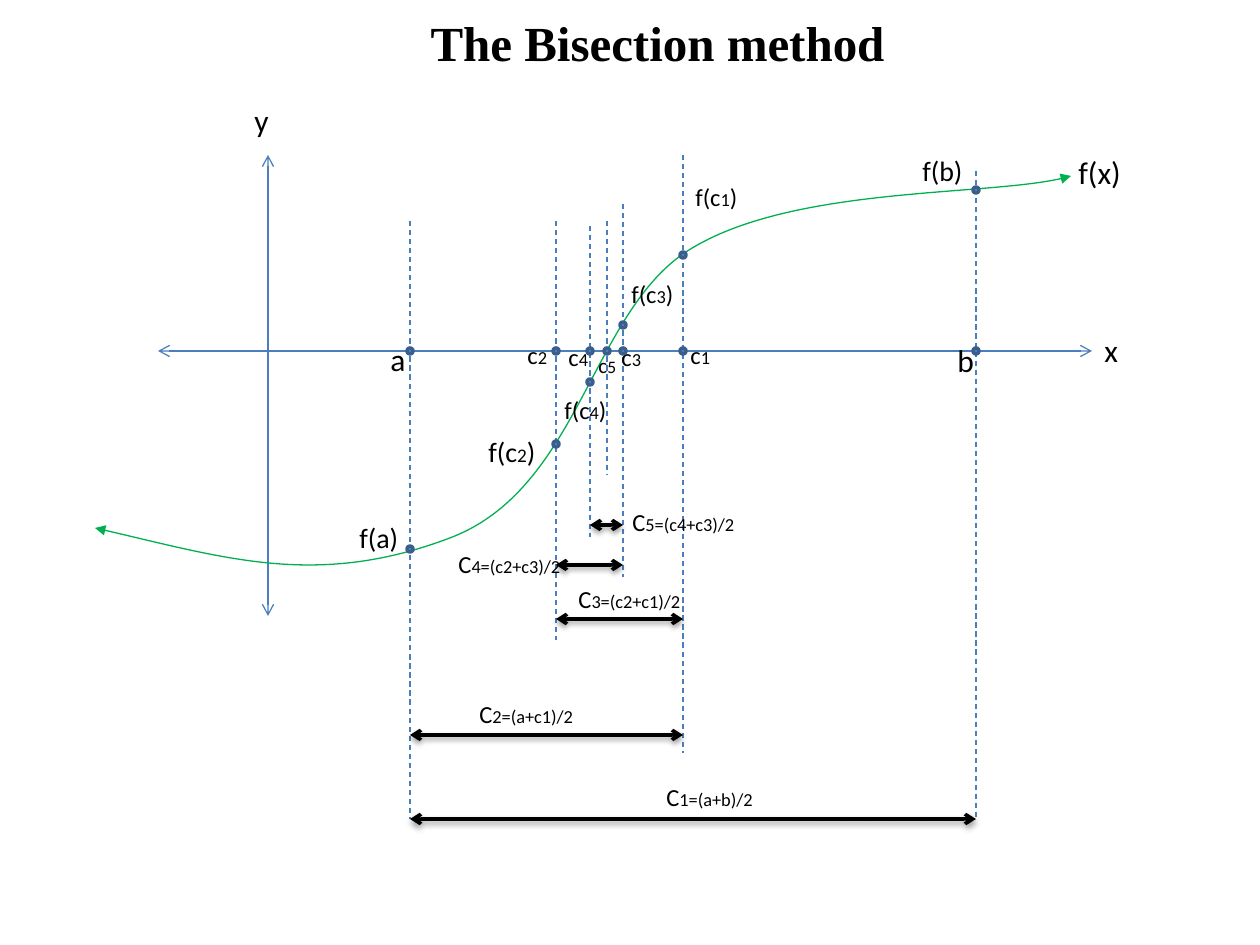
from lxml.etree import SubElement
from pptx import Presentation
from pptx.dml.color import RGBColor
from pptx.enum.dml import MSO_LINE
from pptx.enum.shapes import MSO_CONNECTOR, MSO_SHAPE
from pptx.enum.text import MSO_AUTO_SIZE, PP_ALIGN
from pptx.oxml.ns import qn
from pptx.util import Pt

PX = 914400 / 126
COLORS = {"ink": "000000", "axis": "4B7EBC", "curve": "00B050", "dot": "4F81BD", "rim": "3A5F8C"}
TEXT_HEIGHT = {18: 50, 16: 47, 14: 43, 12: 38}

AXIS_Y = 351
ABSCISSA = {"a": 410, "c2": 556, "c4": 590, "c5": 607, "c3": 623, "c1": 683, "b": 976}
GUIDES = {"a": (221, 819), "b": (171, 819), "c1": (155, 753), "c2": (221, 640),
          "c3": (204, 577), "c4": (226, 537), "c5": (221, 475)}
ORDINATE = {"a": 549, "c2": 444, "c4": 382, "c3": 325, "c1": 255, "b": 190}
INTERVALS = [("a", "b", 819), ("a", "c1", 735), ("c2", "c1", 619),
             ("c2", "c3", 565), ("c4", "c3", 525)]
CURVE_START = (95, 528)
CURVE_CONTROLS = [(222, 557), (318, 588), (450, 538),
                  (582, 488), (591, 306), (694, 247),
                  (798, 186), (1002, 197), (1071, 176)]
CURVE_HEIGHT = 388

PLAIN_LABELS = [
    ("y", 18, 242, 95, 40, False), ("f(x)", 18, 1066, 147, 68, False),
    ("x", 18, 1092, 325, 39, False), ("a", 18, 378, 334, 40, False),
    ("b", 18, 945, 335, 53, True), ("f(b)", 16, 910, 147, 66, False),
    ("f(a)", 16, 347, 514, 86, True),
]
POINT_LABELS = [
    ("1", 14, 10.5, 678, 334), ("2", 14, 10.5, 515, 334), ("3", 14, 10.5, 609, 336),
    ("4", 14, 10.5, 556, 336), ("5", 12, 10, 586, 346),
]
VALUE_LABELS = [
    ("1", 14, 10.5, 683, 176), ("2", 16, 11, 476, 428),
    ("3", 14, 10.5, 619, 273), ("4", 14, 10.5, 552, 389),
]
FORMULAS = [
    ("1=(a+b)/2", 654, 776, 113), ("2=(a+c1)/2", 467, 693, 121),
    ("3=(c2+c1)/2", 566, 578, 130), ("4=(c2+c3)/2", 446, 543, 130),
    ("5=(c4+c3)/2", 620, 501, 130),
]


def px(length):
    return round(length * PX)


def color(name):
    return RGBColor.from_string(COLORS[name])


def apply(target, values):
    for name, value in values.items():
        setattr(target, name, value)


def add_label(slide, runs, left, top, width, wrap=False):
    height = TEXT_HEIGHT[runs[0][1]]
    label = slide.shapes.add_textbox(px(left), px(top), px(width), px(height))
    apply(label.text_frame, {"word_wrap": wrap, "auto_size": MSO_AUTO_SIZE.SHAPE_TO_FIT_TEXT})
    for text, size in runs:
        run = label.text_frame.paragraphs[0].add_run()
        run.text = text
        apply(run.font, {"name": "Calibri", "size": Pt(size)})
        run.font.color.rgb = color("ink")


def add_title(slide, text):
    title = slide.shapes.add_textbox(px(54), px(6), px(1207), px(149))
    title.text_frame.word_wrap = True
    paragraph = title.text_frame.paragraphs[0]
    paragraph.text = text
    paragraph.alignment = PP_ALIGN.CENTER
    apply(paragraph.font, {"name": "Times New Roman", "size": Pt(28), "bold": True})
    paragraph.font.color.rgb = color("ink")


def add_arrowheads(shape, kind):
    outline = shape.element.spPr.find(qn("a:ln"))
    for end in ("a:headEnd", "a:tailEnd"):
        SubElement(outline, qn(end), type=kind)


def add_line(slide, start, end, tint="axis", weight=0.75, dash=None, arrows=False, shadow=False):
    line = slide.shapes.add_connector(MSO_CONNECTOR.STRAIGHT, *map(px, start + end))
    line.line.color.rgb = color(tint)
    apply(line.line, {"width": Pt(weight), "dash_style": dash})
    if arrows:
        add_arrowheads(line, "arrow")
    effects = SubElement(line.element.spPr, qn("a:effectLst"))
    if shadow:
        cast = SubElement(effects, qn("a:outerShdw"), blurRad="40000", dist="20000",
                          dir="5400000", rotWithShape="0")
        shade = SubElement(cast, qn("a:srgbClr"), val=COLORS["ink"])
        SubElement(shade, qn("a:alpha"), val="38000")


def add_dot(slide, x, y):
    dot = slide.shapes.add_shape(MSO_SHAPE.OVAL, px(x - 3), px(y - 3), px(6), px(6))
    dot.shadow.inherit = False
    dot.fill.solid()
    dot.fill.fore_color.rgb = color("dot")
    dot.line.color.rgb = color("rim")
    dot.line.width = Pt(2)


def add_curve(slide):
    builder = slide.shapes.build_freeform(*CURVE_START, scale=PX)
    builder.add_line_segments(CURVE_CONTROLS, close=False)
    curve = builder.convert_to_shape()
    outline = next(curve.element.iter(qn("a:path")))
    steps = outline.findall(qn("a:lnTo"))
    for first in range(0, len(steps), 3):
        bezier = SubElement(outline, qn("a:cubicBezTo"))
        for step in steps[first:first + 3]:
            bezier.append(step[0])
            outline.remove(step)
    outline.set("h", str(CURVE_HEIGHT))
    curve.height = px(CURVE_HEIGHT)
    curve.shadow.inherit = False
    curve.fill.background()
    curve.line.color.rgb = color("curve")
    curve.line.width = Pt(0.75)
    add_arrowheads(curve, "triangle")


def main():
    deck = Presentation()
    apply(deck, {"slide_width": px(1260), "slide_height": px(945)})
    slide = deck.slides.add_slide(deck.slide_layouts[6])

    add_title(slide, "The Bisection method")
    add_line(slide, (158, AXIS_Y), (1092, AXIS_Y), arrows=True)
    add_line(slide, (268, 155), (268, 616), arrows=True)
    add_curve(slide)

    for point, (top, bottom) in GUIDES.items():
        x = ABSCISSA[point]
        add_line(slide, (x, top), (x, bottom), dash=MSO_LINE.DASH)
    for low, high, y in INTERVALS:
        add_line(slide, (ABSCISSA[low], y), (ABSCISSA[high], y),
                 tint="ink", weight=2, arrows=True, shadow=True)

    for text, size, left, top, width, wrap in PLAIN_LABELS:
        add_label(slide, [(text, size)], left, top, width, wrap)
    for index, size, small, left, top in POINT_LABELS:
        add_label(slide, [("c", size), (index, small)], left, top, 45)
    for index, size, small, left, top in VALUE_LABELS:
        add_label(slide, [("f(c", size), (index, small), (")", size)], left, top, 88, True)

    for x in ABSCISSA.values():
        add_dot(slide, x, AXIS_Y)
    for point, y in ORDINATE.items():
        add_dot(slide, ABSCISSA[point], y)
    for formula, left, top, width in FORMULAS:
        add_label(slide, [("C", 14), (formula, 10.5)], left, top, width)

    deck.save("out.pptx")


if __name__ == "__main__":
    main()
